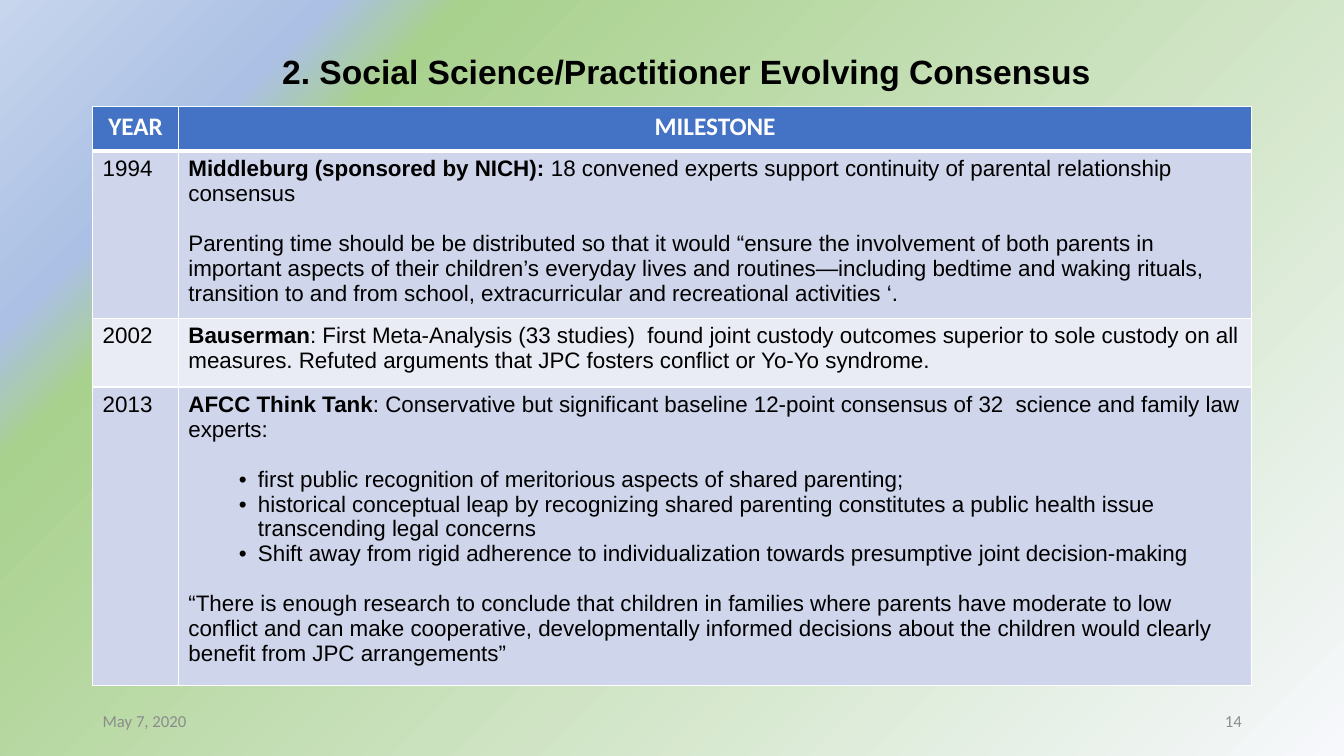
from dataclasses import dataclass

from pptx import Presentation
from pptx.dml.color import RGBColor
from pptx.enum.text import MSO_ANCHOR, PP_ALIGN
from pptx.oxml import parse_xml
from pptx.oxml.ns import nsdecls, qn
from pptx.slide import Slide
from pptx.table import _Cell as Cell
from pptx.text.text import _Paragraph as Para, TextFrame
from pptx.util import Pt

BLACK = RGBColor(0x00, 0x00, 0x00)
WHITE = RGBColor(0xFF, 0xFF, 0xFF)
GREY = RGBColor(0x8C, 0x8C, 0x8C)
BLUE = RGBColor(0x44, 0x72, 0xC4)
DARK = RGBColor(0xCF, 0xD5, 0xEA)
LIGHT = RGBColor(0xE9, 0xEB, 0xF5)
# Backdrop stops: place in percent, colour, opacity in percent
STOPS = (
    (0, RGBColor(0xF6, 0xF8, 0xFC), 100),
    (78, RGBColor(0xA9, 0xD1, 0x8E), 41),
    (84, RGBColor(0xAB, 0xC0, 0xE4), 100),
    (100, RGBColor(0xC7, 0xD5, 0xED), 100),
)
LEFT, WIDTH = 66.2, 828
COLS = (61.2, 766.8)
HEAD = ("YEAR", "MILESTONE")
HEAD_H = 31.7
GAP = 18  # one line of 16 pt text


@dataclass
class Line:
    text: str
    lead: str = ""
    gap: int = 0
    bullet: bool = False


@dataclass
class Event:
    year: str
    height: float
    lines: list[Line]


EVENTS = [
    Event("1994", 119.5, [
        Line("18 convened experts support continuity of parental relationship "
             "consensus", lead="Middleburg (sponsored by NICH): "),
        Line("Parenting time should be be distributed so that it would “ensure "
             "the involvement of both parents in", gap=GAP),
        Line("important aspects of their children’s everyday lives and "
             "routines—including bedtime and waking rituals, transition to and "
             "from school, extracurricular and recreational activities ‘."),
    ]),
    Event("2002", 49, [
        Line(": First Meta-Analysis (33 studies)  found joint custody outcomes "
             "superior to sole custody on all measures. Refuted arguments that "
             "JPC fosters conflict or Yo-Yo syndrome.", lead="Bauserman"),
    ]),
    Event("2013", 213.1, [
        Line(": Conservative but significant baseline 12-point consensus of 32  "
             "science and family law experts:", lead="AFCC Think Tank"),
        Line("first public recognition of meritorious aspects of shared "
             "parenting;", gap=GAP, bullet=True),
        Line("historical conceptual leap by recognizing shared parenting "
             "constitutes a public health issue transcending legal concerns",
             bullet=True),
        Line("Shift away from rigid adherence to individualization towards "
             "presumptive joint decision-making", bullet=True),
        Line("“There is enough research to conclude that children in families "
             "where parents have moderate to low conflict and can make "
             "cooperative, developmentally informed decisions about the children "
             "would clearly benefit from JPC arrangements”", gap=GAP),
    ]),
]


def add_run(para: Para, text: str, size: float, face: str,
            color: RGBColor, bold: bool = False) -> None:
    run = para.add_run()
    run.text = text
    run.font.size = Pt(size)
    run.font.name = face
    run.font.bold = bold
    run.font.color.rgb = color


def add_bullet(para: Para) -> None:
    props = para._p.get_or_add_pPr()
    props.set("marL", str(Pt(49.7)))
    props.set("indent", str(Pt(-13.7)))
    props.append(parse_xml(f'<a:buFont {nsdecls("a")} typeface="Arial"/>'))
    props.append(parse_xml(f'<a:buChar {nsdecls("a")} char="•"/>'))


def add_lines(frame: TextFrame, lines: list[Line]) -> None:
    for i, line in enumerate(lines):
        para = frame.add_paragraph() if i else frame.paragraphs[0]
        if line.gap:
            para.space_before = Pt(line.gap)
        if line.bullet:
            add_bullet(para)
        if line.lead:
            add_run(para, line.lead, 16, "Arial", BLACK, True)
        add_run(para, line.text, 16, "Arial", BLACK)


def style_cell(cell: Cell, fill: RGBColor, top: float = 1, base: float = 1) -> None:
    props = cell._tc.get_or_add_tcPr()
    for side, wide in (("L", 1), ("R", 1), ("T", top), ("B", base)):
        props.append(parse_xml(
            f'<a:ln{side} {nsdecls("a")} w="{Pt(wide)}"><a:solidFill>'
            f'<a:srgbClr val="{WHITE}"/></a:solidFill></a:ln{side}>'))
    cell.fill.solid()
    cell.fill.fore_color.rgb = fill


def paint_back(slide: Slide) -> None:
    slide.background.fill.gradient()
    old = slide.element.find(".//" + qn("a:gradFill"))
    stops = "".join(
        f'<a:gs pos="{at * 1000}"><a:srgbClr val="{color}">'
        f'<a:alpha val="{alpha * 1000}"/></a:srgbClr></a:gs>'
        for at, color, alpha in STOPS)
    old.getparent().replace(old, parse_xml(
        f'<a:gradFill {nsdecls("a")} rotWithShape="1"><a:gsLst>{stops}</a:gsLst>'
        '<a:path path="circle"><a:fillToRect l="100000" t="100000"/></a:path>'
        '<a:tileRect r="-100000" b="-100000"/></a:gradFill>'))


def add_title(slide: Slide) -> None:
    title = slide.shapes.title
    title.left, title.top = Pt(76.3), Pt(25.9)
    title.width, title.height = Pt(WIDTH), Pt(54)
    title.text_frame.vertical_anchor = MSO_ANCHOR.MIDDLE
    para = title.text_frame.paragraphs[0]
    para.alignment = PP_ALIGN.CENTER
    para.line_spacing = 0.9
    add_run(para, "2. Social Science/Practitioner Evolving Consensus",
            24, "Arial", BLACK, True)


def add_grid(slide: Slide) -> None:
    high = HEAD_H + sum(event.height for event in EVENTS)
    grid = slide.shapes.add_table(len(EVENTS) + 1, len(COLS), Pt(LEFT), Pt(76.3),
                                  Pt(WIDTH), Pt(high)).table
    for col, wide in zip(grid.columns, COLS):
        col.width = Pt(wide)
    # Header row
    grid.rows[0].height = Pt(HEAD_H)
    for cell, text in zip(grid.rows[0].cells, HEAD):
        style_cell(cell, BLUE, base=3)
        para = cell.text_frame.paragraphs[0]
        para.alignment = PP_ALIGN.CENTER
        add_run(para, text, 18, "Calibri", WHITE, True)
    # Milestone rows
    for i, event in enumerate(EVENTS, 1):
        grid.rows[i].height = Pt(event.height)
        for cell, lines in zip(grid.rows[i].cells, ([Line(event.year)], event.lines)):
            style_cell(cell, DARK if i % 2 else LIGHT, top=3 if i == 1 else 1)
            add_lines(cell.text_frame, lines)


def add_note(slide: Slide, text: str, left: float, align: PP_ALIGN) -> None:
    frame = slide.shapes.add_textbox(Pt(left), Pt(500.4), Pt(216), Pt(28.8)).text_frame
    frame.word_wrap = True
    frame.vertical_anchor = MSO_ANCHOR.MIDDLE
    para = frame.paragraphs[0]
    para.alignment = align
    add_run(para, text, 12, "Calibri", GREY)


def main() -> None:
    deck = Presentation()
    deck.slide_width, deck.slide_height = Pt(960), Pt(540)
    slide = deck.slides.add_slide(deck.slide_layouts.get_by_name("Title Only"))
    paint_back(slide)
    add_title(slide)
    add_grid(slide)
    # Footer
    add_note(slide, "May 7, 2020", LEFT, PP_ALIGN.LEFT)
    add_note(slide, "14", LEFT + WIDTH - 216, PP_ALIGN.RIGHT)
    deck.save("out.pptx")


if __name__ == "__main__":
    main()
